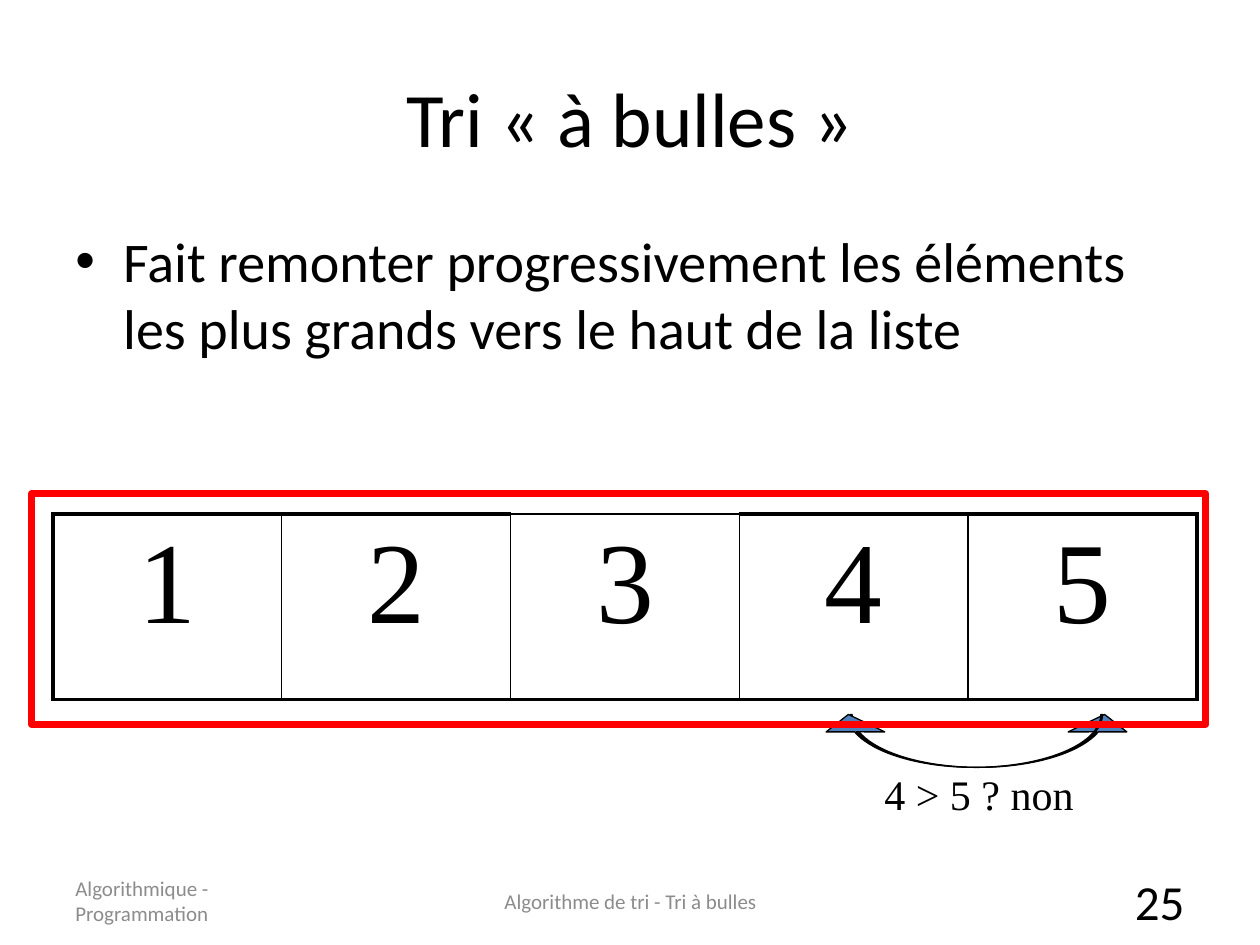
from dataclasses import dataclass

from lxml import etree
from pptx import Presentation
from pptx.dml.color import RGBColor
from pptx.enum.shapes import MSO_SHAPE
from pptx.enum.text import MSO_ANCHOR, PP_ALIGN
from pptx.oxml.ns import qn
from pptx.util import Inches, Pt

LEFT, CENTER, RIGHT = PP_ALIGN.LEFT, PP_ALIGN.CENTER, PP_ALIGN.RIGHT
TOP, MIDDLE = MSO_ANCHOR.TOP, MSO_ANCHOR.MIDDLE
RECTANGLE, CURVED_ARROW = MSO_SHAPE.RECTANGLE, MSO_SHAPE.CURVED_UP_ARROW
SANS, SERIF = "Calibri", "Times New Roman"
COLORS = {"black": "000000", "grey": "8C8C8C", "blue": "4F81BD", "red": "FF0000"}
THIN, THICK = 1, 2.25


@dataclass
class Label:
    text: str
    box: tuple[float, float, float, float]
    size: float
    font: str = SANS
    color: str = "black"
    align: PP_ALIGN = LEFT
    anchor: MSO_ANCHOR = MIDDLE
    wrap: bool = True
    bullet: bool = False


@dataclass
class Outline:
    kind: MSO_SHAPE
    box: tuple[float, float, float, float]
    line: str
    width: float
    fill: str | None = None
    adjustments: tuple[float, ...] = ()
    flipped: bool = False


def rgb(name: str) -> RGBColor:
    return RGBColor.from_string(COLORS[name])


def style_paragraph(paragraph, size: float, font: str, color: str, align: PP_ALIGN) -> None:
    paragraph.alignment = align
    for run in paragraph.runs:
        run.font.size = Pt(size)
        run.font.name = font
        run.font.color.rgb = rgb(color)


def add_bullet(paragraph) -> None:
    properties = paragraph._p.get_or_add_pPr()
    properties.set("marL", str(Inches(0.38)))
    properties.set("indent", str(Inches(-0.38)))
    paragraph.space_before = Pt(6.4)
    etree.SubElement(properties, qn("a:buFont"), typeface="Arial")
    etree.SubElement(properties, qn("a:buChar"), char="•")


def add_label(slide, label: Label) -> None:
    shape = slide.shapes.add_textbox(*map(Inches, label.box))
    text_frame = shape.text_frame
    text_frame.word_wrap = label.wrap
    text_frame.vertical_anchor = label.anchor
    text_frame.text = label.text
    paragraph = text_frame.paragraphs[0]
    style_paragraph(paragraph, label.size, label.font, label.color, label.align)
    if label.bullet:
        add_bullet(paragraph)


def add_outline(slide, outline: Outline) -> None:
    shape = slide.shapes.add_shape(outline.kind, *map(Inches, outline.box))
    shape.shadow.inherit = False
    shape.line.color.rgb = rgb(outline.line)
    shape.line.width = Pt(outline.width)
    if outline.fill:
        shape.fill.solid()
        shape.fill.fore_color.rgb = rgb(outline.fill)
    else:
        shape.fill.background()
    for index, value in enumerate(outline.adjustments):
        shape.adjustments[index] = value
    if outline.flipped:
        shape._element.spPr.find(qn("a:xfrm")).set("flipH", "1")


def set_borders(cell, widths: dict[str, float]) -> None:
    properties = cell._tc.get_or_add_tcPr()
    for index, (side, width) in enumerate(widths.items()):
        border = etree.Element(qn(f"a:{side}"), w=str(Pt(width)))
        fill = etree.SubElement(border, qn("a:solidFill"))
        etree.SubElement(fill, qn("a:srgbClr"), val=COLORS["black"])
        properties.insert(index, border)


def add_list_table(slide, values: list[str], thin_top: int) -> None:
    """Draw the sorted list as one row of equal cells."""
    last = len(values) - 1
    frame = slide.shapes.add_table(1, len(values), *map(Inches, (0.42, 4.08, 9.08, 1.47)))
    table = frame.table
    table.first_row = table.horz_banding = False
    for column, value in enumerate(values):
        cell = table.cell(0, column)
        cell.fill.background()
        cell.text_frame.text = value
        paragraph = cell.text_frame.paragraphs[0]
        paragraph.space_before = Pt(13.2)
        style_paragraph(paragraph, 66, SERIF, "black", CENTER)
        set_borders(cell, {
            "lnL": THICK if column == 0 else THIN,
            "lnR": THICK if column == last else THIN,
            "lnT": THIN if column == thin_top else THICK,
            "lnB": THICK,
        })


def main() -> None:
    presentation = Presentation()
    presentation.slide_width, presentation.slide_height = Inches(10), Inches(7.5)
    slide = presentation.slides.add_slide(presentation.slide_layouts[6])

    # Title and explanation
    add_label(slide, Label("Tri «\u00a0à bulles\u00a0»", (0.5, 0.3, 9, 1.25), 44, align=CENTER))
    add_label(slide, Label(
        "Fait remonter progressivement les éléments les plus grands vers le haut de la liste",
        (0.5, 1.75, 9, 4.95), 32, anchor=TOP, bullet=True))

    # Sorted list
    add_list_table(slide, ["1", "2", "3", "4", "5"], thin_top=2)

    # Comparison of the last two elements
    for left, flipped in ((6.75, False), (6.5, True)):
        add_outline(slide, Outline(CURVED_ARROW, (left, 5.67, 2.25, 0.42), "black", 0.75,
                                   "blue", (0.03, 1.11, 0.33), flipped))
    add_label(slide, Label("4 > 5 ? non", (6.92, 6.05, 1.7, 0.5), 24, SERIF,
                           anchor=TOP, wrap=False))

    # Footer
    add_label(slide, Label("Algorithmique - Programmation", (0.5, 6.95, 2.33, 0.4), 12,
                           color="grey"))
    add_label(slide, Label("Algorithme de tri - Tri à bulles", (3.42, 6.95, 3.17, 0.4), 12,
                           color="grey", align=CENTER))
    add_label(slide, Label("25", (7.17, 6.95, 2.33, 0.4), 28, align=RIGHT))

    # Frame around the finished list
    add_outline(slide, Outline(RECTANGLE, (0.25, 3.92, 9.32, 1.83), "red", 4))

    presentation.save("out.pptx")


if __name__ == "__main__":
    main()
